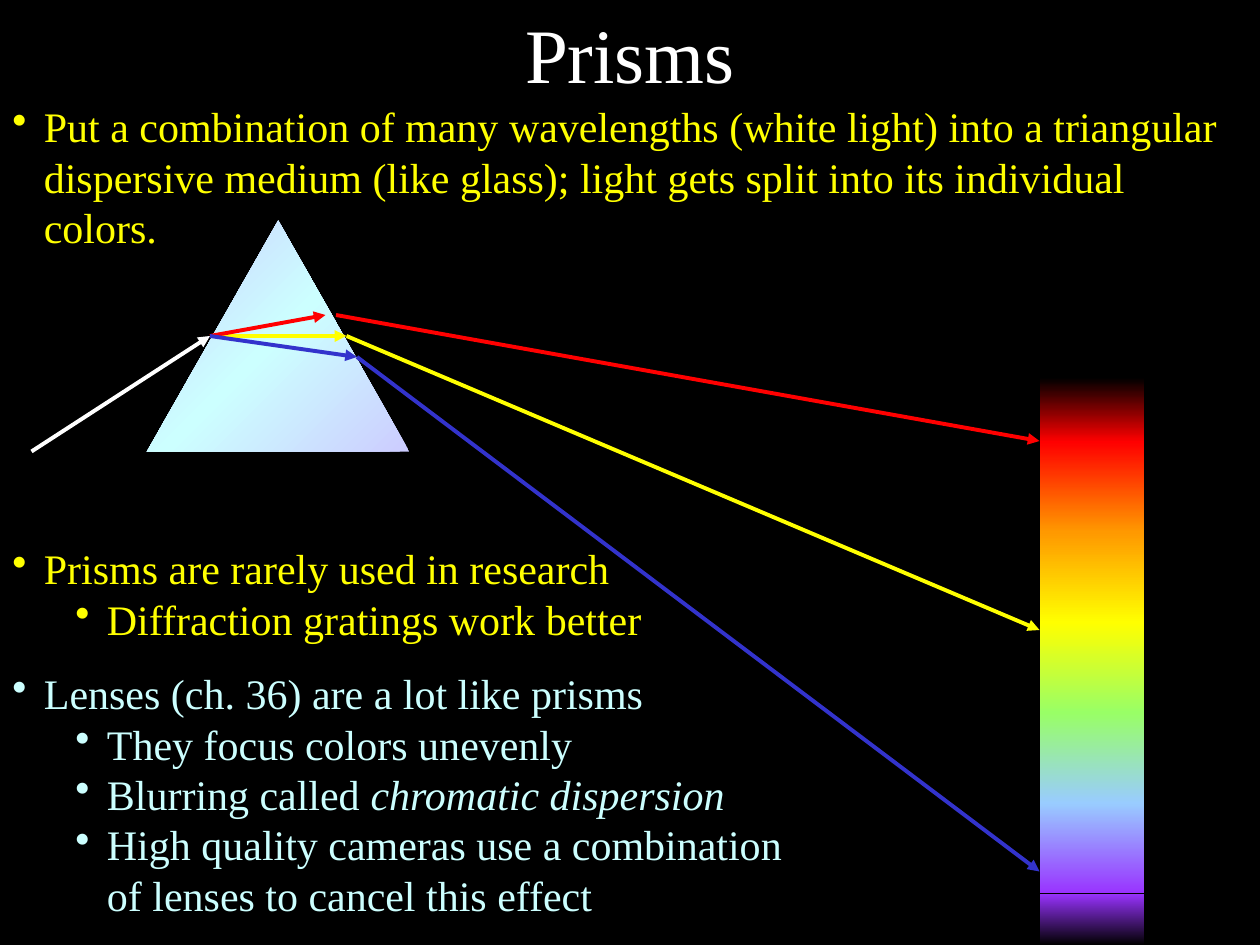
from dataclasses import dataclass
from itertools import pairwise

from lxml import etree
from pptx import Presentation
from pptx.dml.color import RGBColor
from pptx.enum.shapes import MSO_CONNECTOR, MSO_SHAPE
from pptx.enum.text import PP_ALIGN
from pptx.oxml.ns import qn
from pptx.util import Pt

LINE = MSO_CONNECTOR.STRAIGHT
RECT = MSO_SHAPE.RECTANGLE
PRISM = MSO_SHAPE.ISOSCELES_TRIANGLE
CENTER = PP_ALIGN.CENTER


@dataclass(frozen=True)
class Theme:
    font: str = "Times New Roman"
    head: int = 44
    body: int = 24
    ray: float = 2.25
    black: str = "000000"
    white: str = "FFFFFF"
    yellow: str = "FFFF00"
    red: str = "FF0000"
    blue: str = "3333CC"
    ice: str = "CCFFFF"
    lilac: str = "CCCCFF"
    bands: tuple = ("000000", "FF0000", "FF9900", "FFFF00",
                    "99FF66", "99CCFF", "9933FF", "000000")


THEME = Theme()


def style(run, size, color):
    run.font.name = THEME.font
    run.font.size = Pt(size)
    run.font.color.rgb = RGBColor.from_string(color)


def add_box(slide, left, top, width, height):
    box = slide.shapes.add_textbox(Pt(left), Pt(top), Pt(width), Pt(height))
    box.text_frame.word_wrap = True
    return box.text_frame


def add_title(slide, text):
    para = add_box(slide, 0, 0, 720, 60).paragraphs[0]
    para.text = text
    para.alignment = CENTER
    style(para.runs[0], THEME.head, THEME.white)


def set_bullet(para, level):
    para.level = level
    props = para._p.get_or_add_pPr()
    props.set("marL", str(Pt(18 + 36 * level)))
    props.set("indent", str(Pt(-18)))
    etree.SubElement(props, qn("a:buChar")).set("char", "•")


def add_list(slide, frame, color, items):
    """Each item is a level, plain text and, if any, closing italic text."""
    text = add_box(slide, *frame)
    for i, (level, plain, *slant) in enumerate(items):
        para = text.add_paragraph() if i else text.paragraphs[0]
        set_bullet(para, level)
        para.text = plain
        for word in slant:
            run = para.add_run()
            run.text = word
            run.font.italic = True
        for run in para.runs:
            style(run, THEME.body, color)


def add_blend(slide, kind, frame, colors, angle):
    shape = slide.shapes.add_shape(kind, *map(Pt, frame))
    shape.shadow.inherit = False
    shape.line.fill.background()
    shape.fill.gradient()
    shape.fill.gradient_angle = 360 - angle
    stops = shape._element.spPr.find(".//" + qn("a:gsLst"))
    for stop in list(stops):
        stops.remove(stop)
    for i, color in enumerate(colors):
        stop = etree.SubElement(stops, qn("a:gs"))
        stop.set("pos", str(100000 * i // (len(colors) - 1)))
        etree.SubElement(stop, qn("a:srgbClr")).set("val", color)


def add_ray(slide, start, end, color):
    ray = slide.shapes.add_connector(LINE, *map(Pt, start + end))
    ray.line.width = Pt(THEME.ray)
    ray.line.color.rgb = RGBColor.from_string(color)
    tip = etree.SubElement(ray.line._get_or_add_ln(), qn("a:tailEnd"))
    tip.set("type", "triangle")
    etree.SubElement(ray._element.spPr, qn("a:effectLst"))


def add_rays(slide):
    entry = (120, 192)
    add_ray(slide, (18, 258), entry, THEME.white)
    # Inner end, outer start and screen point of each colour
    for color, inner, outer, screen in (
        (THEME.yellow, (198, 192), (198, 192), (594, 360)),
        (THEME.red, (186, 180), (192, 180), (594, 252)),
        (THEME.blue, (204, 204), (204, 204), (594, 498)),
    ):
        add_ray(slide, entry, inner, color)
        add_ray(slide, outer, screen, color)


def add_bands(slide):
    step = 51.6
    edges = [216, *(252.6 + step * i for i in range(6)), 540]
    for (top, end), pair in zip(pairwise(edges), pairwise(THEME.bands)):
        add_blend(slide, RECT, (594, top, 60, end - top), pair, 90)


def main():
    deck = Presentation()
    deck.slide_width, deck.slide_height = Pt(720), Pt(540)
    slide = deck.slides.add_slide(deck.slide_layouts[6])
    back = slide.background.fill
    back.solid()
    back.fore_color.rgb = RGBColor.from_string(THEME.black)

    # Title and opening point
    add_title(slide, "Prisms")
    add_list(slide, (0, 54, 714, 94.3), THEME.yellow, [
        (0, "Put a combination of many wavelengths (white light) into a "
            "triangular dispersive medium (like glass); light gets split "
            "into its individual colors."),
    ])

    # Prism, rays and spectrum
    add_blend(slide, PRISM, (84, 126, 150, 132),
              (THEME.lilac, THEME.ice, THEME.lilac), 45)
    add_rays(slide)
    add_bands(slide)

    # Closing points
    add_list(slide, (0, 306.6, 375, 65.5), THEME.yellow, [
        (0, "Prisms are rarely used in research"),
        (1, "Diffraction gratings work better"),
    ])
    add_list(slide, (0, 378, 480, 152.6), THEME.ice, [
        (0, "Lenses (ch. 36) are a lot like prisms"),
        (1, "They focus colors unevenly"),
        (1, "Blurring called ", "chromatic dispersion"),
        (1, "High quality cameras use a combination of lenses to cancel "
            "this effect"),
    ])
    deck.save("out.pptx")


if __name__ == "__main__":
    main()
